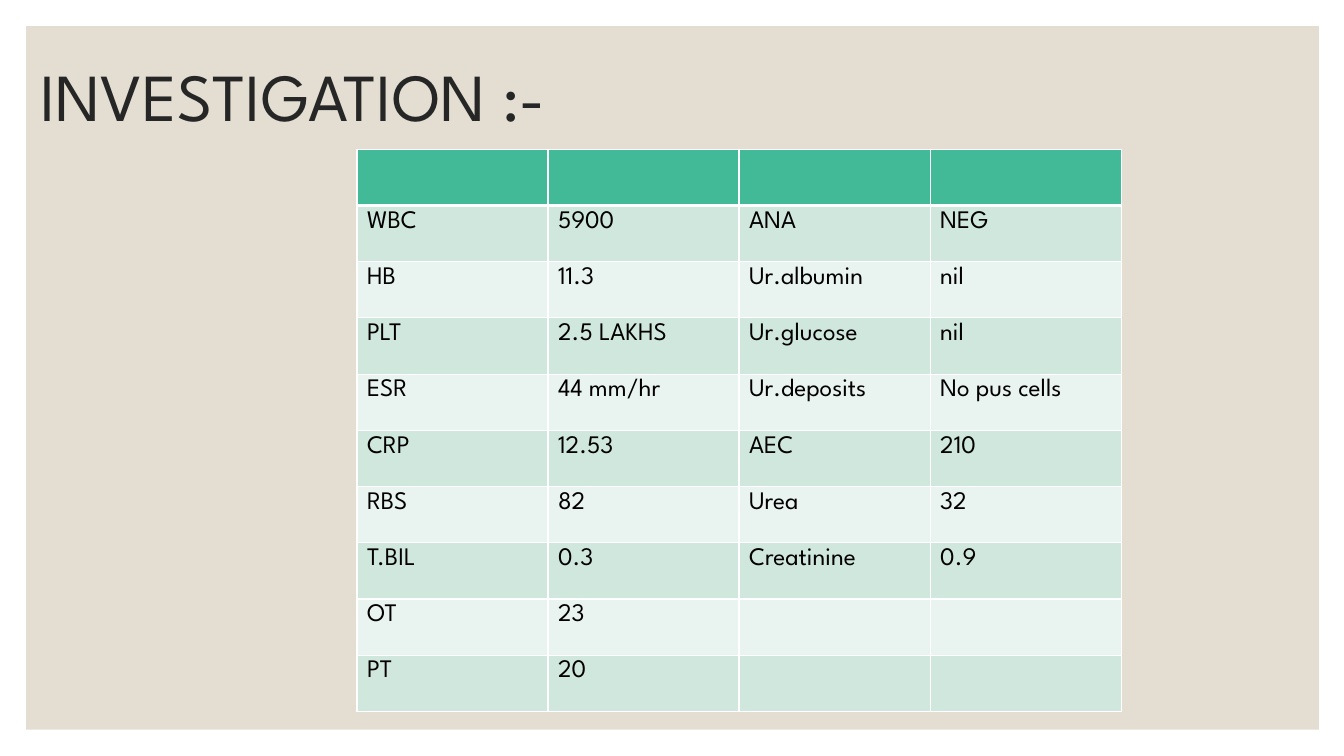
from lxml import etree
from pptx import Presentation
from pptx.dml.color import RGBColor
from pptx.enum.shapes import MSO_SHAPE
from pptx.enum.text import MSO_ANCHOR
from pptx.oxml.ns import qn
from pptx.util import Inches, Pt

RECTANGLE = MSO_SHAPE.RECTANGLE
MIDDLE = MSO_ANCHOR.MIDDLE

# Content
TITLE = "INVESTIGATION :-"
RESULTS = [
    ("", "", "", ""),
    ("WBC", "5900", "ANA", "NEG"),
    ("HB", "11.3", "Ur.albumin", "nil"),
    ("PLT", "2.5 LAKHS", "Ur.glucose", "nil"),
    ("ESR", "44 mm/hr", "Ur.deposits", "No pus cells"),
    ("CRP", "12.53", "AEC", "210"),
    ("RBS", "82", "Urea", "32"),
    ("T.BIL", "0.3", "Creatinine", "0.9"),
    ("OT", "23", "", ""),
    ("PT", "20", "", ""),
]
FONT = "League Spartan"
COLORS = {
    "panel": "E3DED1",
    "title": "262626",
    "header": "42BA97",
    "odd": "CFE7DD",
    "even": "E9F3EF",
    "text": "000000",
    "border": "FFFFFF",
}


def color(name):
    return RGBColor.from_string(COLORS[name])


def style_text(para, size, color_name):
    para.font.name = FONT
    para.font.size = Pt(size)
    para.font.color.rgb = color(color_name)


def add_borders(cell, bottom_width, top_width):
    properties = cell._tc.get_or_add_tcPr()
    widths = {"a:lnL": 1, "a:lnR": 1, "a:lnT": top_width, "a:lnB": bottom_width}
    for side, width in widths.items():
        line = etree.SubElement(properties, qn(side), w=str(Pt(width)))
        fill = etree.SubElement(line, qn("a:solidFill"))
        etree.SubElement(fill, qn("a:srgbClr"), val=COLORS["border"])


deck = Presentation()
deck.slide_width, deck.slide_height = Inches(13.33), Inches(7.5)
page = deck.slides.add_slide(deck.slide_layouts[6])

# Background panel
panel = page.shapes.add_shape(
    RECTANGLE, Inches(0.26), Inches(0.26), Inches(12.82), Inches(6.98))
panel.shadow.inherit = False
panel.fill.solid()
panel.fill.fore_color.rgb = color("panel")
panel.line.fill.background()

# Title
title_box = page.shapes.add_textbox(
    Inches(0.3), Inches(0.24), Inches(11), Inches(1.5))
title_box.text_frame.word_wrap = True
title_box.text_frame.vertical_anchor = MIDDLE
title = title_box.text_frame.paragraphs[0]
title.text = TITLE
title.line_spacing = 0.9
style_text(title, 48, "title")

# Results table
table = page.shapes.add_table(
    len(RESULTS), len(RESULTS[0]),
    Inches(3.54), Inches(1.48), Inches(7.58), Inches(5.58)).table
for row_index, values in enumerate(RESULTS):
    if row_index == 0:
        fill_name = "header"
    else:
        fill_name = "odd" if row_index % 2 else "even"
    for column_index, value in enumerate(values):
        cell = table.cell(row_index, column_index)
        add_borders(cell, 3 if row_index == 0 else 1, 3 if row_index == 1 else 1)
        cell.fill.solid()
        cell.fill.fore_color.rgb = color(fill_name)
        if value:
            cell.text = value
            style_text(cell.text_frame.paragraphs[0], 18, "text")

deck.save("out.pptx")
